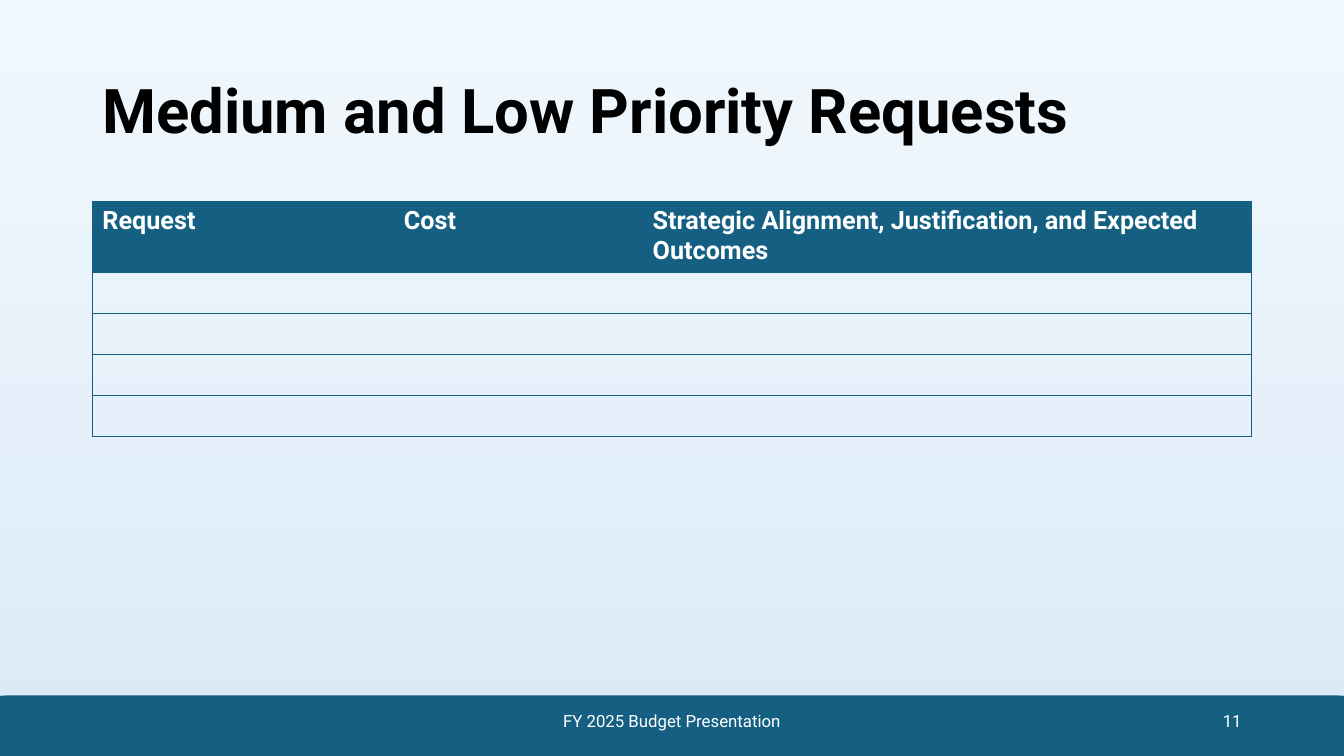
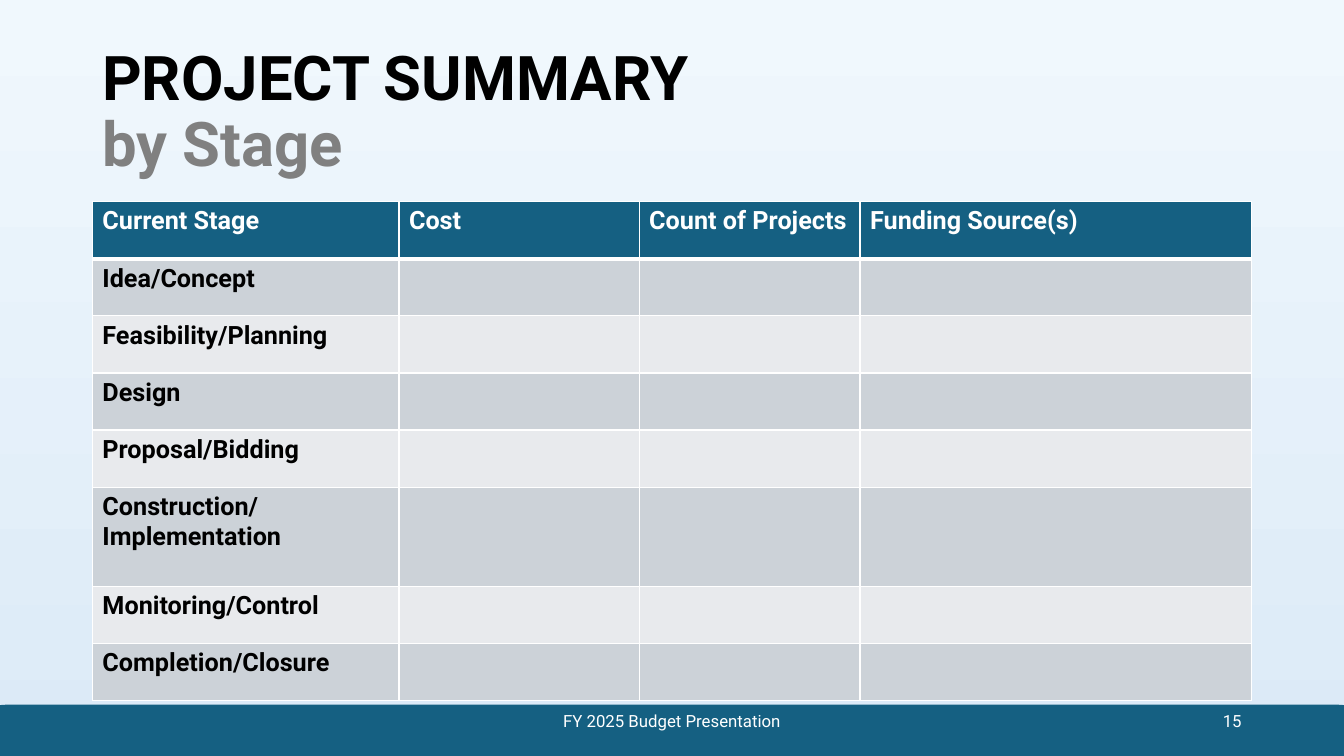
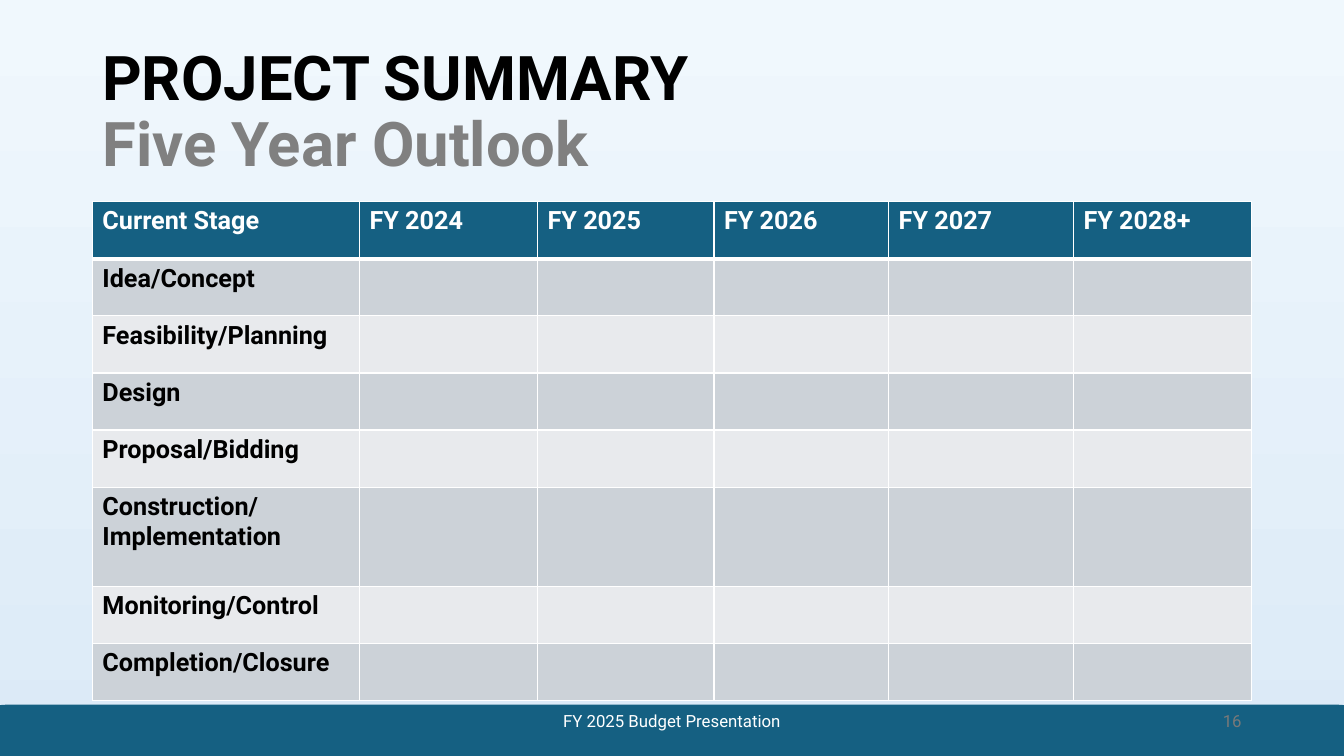
import dataclasses
import typing

import lxml.etree
import pptx
import pptx.dml.color
import pptx.enum.shapes
import pptx.enum.text
import pptx.oxml.ns
import pptx.util

COLS, ROWS = 160, 90
UNIT = pptx.util.Inches(1) / 12
LEFT, WIDE, TOP = 11, 138, 24
FONT = "Roboto"
INK = {
    "sky": "F0F8FD",
    "haze": "DCEAF7",
    "teal": "156082",
    "white": "FFFFFF",
    "black": "000000",
    "gray": "808080",
    "dim": "797979",
    "dark": "CCD2D8",
    "light": "E8EAED",
}
STAGES = (
    "Idea/Concept",
    "Feasibility/Planning",
    "Design",
    "Proposal/Bidding",
    "Construction/\nImplementation",
    "Monitoring/Control",
    "Completion/Closure",
)
STEPS = (6.8,) * 5 + (11.8,) + (6.8,) * 2
ALIGN = pptx.enum.text.PP_ALIGN


@dataclasses.dataclass(frozen=True)
class Grid:
    heads: tuple[str, ...]
    widths: tuple[float, ...]
    heights: tuple[float, ...]
    names: tuple[str, ...] = ()
    plain: bool = False


@dataclasses.dataclass(frozen=True)
class Page:
    title: tuple[str, ...]
    number: str
    grid: Grid
    band: float = 83.9
    tone: str = "white"


PAGES = (
    Page(
        ("Medium and Low Priority Requests",),
        "11",
        Grid(
            ("Request", "Cost", "Strategic Alignment, Justification, and Expected Outcomes"),
            (35.9, 29.6, 72.5),
            (8.1,) + (4.9,) * 4,
            plain=True,
        ),
        band=82.8,
    ),
    Page(
        ("PROJECT SUMMARY", "by Stage"),
        "15",
        Grid(
            ("Current Stage", "Cost", "Count of Projects", "Funding Source(s)"),
            (36.5, 28.6, 26.3, 46.6),
            STEPS,
            STAGES,
        ),
    ),
    Page(
        ("PROJECT SUMMARY", "Five Year Outlook"),
        "16",
        Grid(
            ("Current Stage", "FY 2024", "FY 2025", "FY 2026", "FY 2027", "FY 2028+"),
            (31.8, 21.2, 21, 20.8, 22, 21.2),
            STEPS,
            STAGES,
        ),
        tone="dim",
    ),
)


def span(*units: float) -> list[pptx.util.Emu]:
    return [pptx.util.Emu(round(unit * UNIT)) for unit in units]


def tint(name: str) -> pptx.dml.color.RGBColor:
    return pptx.dml.color.RGBColor.from_string(INK[name])


def style(font: typing.Any, size: float, tone: str, bold: bool = False) -> None:
    font.name = FONT
    font.size = pptx.util.Pt(size)
    font.bold = bold
    font.color.rgb = tint(tone)


def back(slide: typing.Any) -> None:
    fill = slide.background.fill
    fill.gradient()
    fill.gradient_angle = 270
    for stop, name in zip(fill.gradient_stops, ("sky", "haze")):
        stop.color.rgb = tint(name)


def band(slide: typing.Any, top: float) -> None:
    kind = pptx.enum.shapes.MSO_SHAPE.ROUNDED_RECTANGLE
    shape = slide.shapes.add_shape(kind, *span(-4.4, top, 168.8, 10.1))
    shape.adjustments[0] = 0.5
    shape.shadow.inherit = False
    shape.fill.solid()
    shape.fill.fore_color.rgb = tint("teal")
    shape.line.fill.background()


def box(slide: typing.Any, *place: float) -> typing.Any:
    frame = slide.shapes.add_textbox(*span(*place)).text_frame
    frame.word_wrap = True
    frame.vertical_anchor = pptx.enum.text.MSO_ANCHOR.MIDDLE
    return frame.paragraphs[0]


def head(slide: typing.Any, lines: tuple[str, ...]) -> None:
    para = box(slide, LEFT, 4.8, WIDE, 17.4)
    para.line_spacing = 0.9
    style(para.font, 44, "black", True)
    for index, line in enumerate(lines):
        if index:
            para.add_line_break()
        run = para.add_run()
        run.text = line
        style(run.font, 44, "gray" if index else "black", True)


def foot(slide: typing.Any, page: Page) -> None:
    for text, left, wide, align, tone in (
        ("FY 2025 Budget Presentation", 53, 54, ALIGN.CENTER, "white"),
        (page.number, 113, 36, ALIGN.RIGHT, page.tone),
    ):
        para = box(slide, left, 83.4, wide, 4.8)
        para.text = text
        para.alignment = align
        style(para.font, 12, tone)


def edge(cell: typing.Any, sides: dict[str, float], tone: str) -> None:
    props = cell._tc.get_or_add_tcPr()
    qn = pptx.oxml.ns.qn
    for index, (side, width) in enumerate(sides.items()):
        line = lxml.etree.Element(qn(f"a:ln{side}"), w=str(pptx.util.Pt(width)))
        if width:
            fill = lxml.etree.SubElement(line, qn("a:solidFill"))
            lxml.etree.SubElement(fill, qn("a:srgbClr"), val=INK[tone])
        else:
            lxml.etree.SubElement(line, qn("a:noFill"))
        props.insert(index, line)


def paint(cell: typing.Any, row: int, plain: bool) -> None:
    if row and plain:
        cell.fill.background()
        return
    cell.fill.solid()
    name = ("dark" if row % 2 else "light") if row else "teal"
    cell.fill.fore_color.rgb = tint(name)


def table(slide: typing.Any, grid: Grid) -> None:
    rows, cols = len(grid.heights), len(grid.widths)
    place = span(LEFT, TOP, WIDE, sum(grid.heights))
    chart = slide.shapes.add_table(rows, cols, *place).table
    chart.horz_banding = False
    for col, wide in zip(chart.columns, span(*grid.widths)):
        col.width = wide
    for row, high in zip(chart.rows, span(*grid.heights)):
        row.height = high
    for row in range(rows):
        for col in range(cols):
            cell = chart.cell(row, col)
            if row == 0:
                cell.text = grid.heads[col]
            elif col == 0 and grid.names:
                cell.text = grid.names[row - 1]
            for para in cell.text_frame.paragraphs:
                style(para.font, 18, "black" if row else "white", True)
            paint(cell, row, grid.plain)
            sides = {
                "L": int(not grid.plain or col == 0),
                "R": int(not grid.plain or col == cols - 1),
                "T": 3 if row == 1 and not grid.plain else 1,
                "B": 3 if row == 0 and not grid.plain else 1,
            }
            edge(cell, sides, "teal" if grid.plain else "white")


def main() -> None:
    deck = pptx.Presentation()
    deck.slide_width, deck.slide_height = span(COLS, ROWS)
    for page in PAGES:
        slide = deck.slides.add_slide(deck.slide_layouts[6])
        back(slide)
        band(slide, page.band)
        head(slide, page.title)
        table(slide, page.grid)
        foot(slide, page)
    deck.save("out.pptx")


if __name__ == "__main__":
    main()
